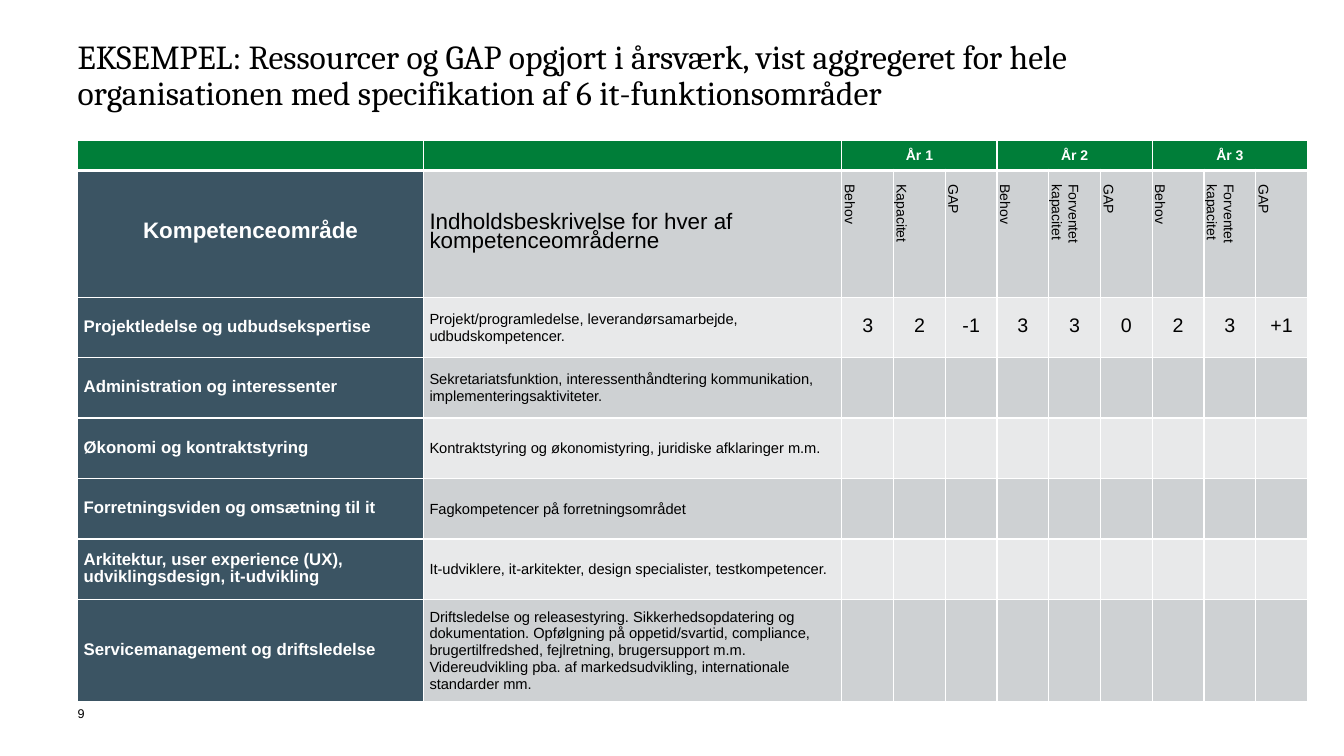
from lxml.etree import SubElement
from pptx import Presentation
from pptx.dml.color import RGBColor
from pptx.enum.text import MSO_ANCHOR, PP_ALIGN
from pptx.oxml.ns import qn
from pptx.util import Inches, Pt

COLORS = {
    "text": "000000", "white": "FFFFFF", "green": "007E39",
    "slate": "3B5463", "dark": "CED1D3", "light": "E8E9EA",
}
LEFT = 0.77
TABLE_WIDTH = 12.2
TEXT_COLS = [3.43, 4.15]
YEARS = ["År 1", "År 2", "År 3"]
MEASURES = ["Behov", "Kapacitet", "GAP"] + ["Behov", "Forventet kapacitet", "GAP"] * 2
ROW_HEIGHTS = [0.23, 0.9] + [0.6] * 5 + [1.01]
AREAS = [
    ("Projektledelse og udbudsekspertise",
     "Projekt/programledelse, leverandørsamarbejde, udbudskompetencer.",
     ["3", "2", "-1", "3", "3", "0", "2", "3", "+1"]),
    ("Administration og interessenter",
     "Sekretariatsfunktion, interessenthåndtering kommunikation, "
     "implementeringsaktiviteter.", []),
    ("Økonomi og kontraktstyring",
     "Kontraktstyring og økonomistyring, juridiske afklaringer m.m.", []),
    ("Forretningsviden og omsætning til it",
     "Fagkompetencer på forretningsområdet", []),
    ("Arkitektur, user experience (UX), udviklingsdesign, it-udvikling",
     "It-udviklere, it-arkitekter, design specialister, testkompetencer.", []),
    ("Servicemanagement og driftsledelse",
     "Driftsledelse og releasestyring. Sikkerhedsopdatering og dokumentation. "
     "Opfølgning på oppetid/svartid, compliance, brugertilfredshed, fejlretning, "
     "brugersupport m.m. Videreudvikling pba. af markedsudvikling, internationale "
     "standarder mm.", []),
]


class SlideBuilder:
    def __init__(self, slide):
        self.s = slide

    def run(self, p, text, size, color="text", font="Arial", bold=False):
        r = p.add_run()
        r.text = text
        r.font.size, r.font.name, r.font.bold = Pt(size), font, bold
        r.font.color.rgb = RGBColor.from_string(COLORS[color])

    def text(self, x, y, w, h, text, size, font="Arial", spacing=1.0):
        tf = self.s.shapes.add_textbox(Inches(x), Inches(y), Inches(w), Inches(h)).text_frame
        tf.word_wrap = True
        tf.margin_left = tf.margin_right = tf.margin_top = tf.margin_bottom = 0
        p = tf.paragraphs[0]
        p.line_spacing = spacing
        self.run(p, text, size, font=font)

    def table(self, x, y, widths, heights):
        frame = self.s.shapes.add_table(
            len(heights), len(widths), Inches(x), Inches(y),
            Inches(sum(widths)), Inches(sum(heights)))
        table = frame.table
        table.first_row = table.horz_banding = False
        for col, width in zip(table.columns, widths):
            col.width = Inches(width)
        for row, height in zip(table.rows, heights):
            row.height = Inches(height)
        return table

    def borders(self, cell, top=1, bottom=1):
        tcPr = cell._tc.get_or_add_tcPr()
        for side, width in (("L", 1), ("R", 1), ("T", top), ("B", bottom)):
            ln = SubElement(tcPr, qn(f"a:ln{side}"), w=str(Pt(width)))
            fill = SubElement(ln, qn("a:solidFill"))
            SubElement(fill, qn("a:srgbClr"), val=COLORS["white"])

    def cell(self, cell, fill, text="", size=10, color="text", bold=False,
             align=PP_ALIGN.LEFT, spacing=12, vertical=False,
             anchor=MSO_ANCHOR.MIDDLE, top=1, bottom=1):
        self.borders(cell, top, bottom)
        cell.fill.solid()
        cell.fill.fore_color.rgb = RGBColor.from_string(COLORS[fill])
        cell.margin_left = cell.margin_right = Inches(0.06)
        cell.margin_top = cell.margin_bottom = 0
        cell.vertical_anchor = anchor
        p = cell.text_frame.paragraphs[0]
        p.alignment, p.line_spacing = align, Pt(spacing)
        if vertical:
            cell._tc.get_or_add_tcPr().set("vert", "vert")
            p._p.get_or_add_pPr().set("marL", str(Inches(0.08)))
        if text:
            self.run(p, text, size, color, bold=bold)


def main():
    prs = Presentation()
    prs.slide_width, prs.slide_height = Inches(13.33), Inches(7.5)
    s = SlideBuilder(prs.slides.add_slide(prs.slide_layouts[6]))

    # Page number and title
    s.text(LEFT, 7, 0.31, 0.3, "9", 9)
    s.text(LEFT, 0.4, 11.8, 1.02,
           "EKSEMPEL: Ressourcer og GAP opgjort i årsværk, vist aggregeret for hele "
           "organisationen med specifikation af 6 it-funktionsområder",
           24, font="Cambria", spacing=0.9)

    # Table grid
    count = len(MEASURES)
    measure_width = (TABLE_WIDTH - sum(TEXT_COLS)) / count
    table = s.table(LEFT, 1.39, TEXT_COLS + [measure_width] * count, ROW_HEIGHTS)

    # Year row
    years = {2 + 3 * i: year for i, year in enumerate(YEARS)}
    for col in range(2 + count):
        s.cell(table.cell(0, col), "green", years.get(col, ""), 10, "white", True,
               PP_ALIGN.CENTER, bottom=3)
    for col in years:
        table.cell(0, col).merge(table.cell(0, col + 2))

    # Column headings
    s.cell(table.cell(1, 0), "slate", "Kompetenceområde", 16, "white", True,
           PP_ALIGN.CENTER, 14, top=3)
    s.cell(table.cell(1, 1), "dark", "Indholdsbeskrivelse for hver af kompetenceområderne",
           16, spacing=14, top=3)
    for i, measure in enumerate(MEASURES):
        anchor = MSO_ANCHOR.TOP if i == count - 1 else MSO_ANCHOR.MIDDLE
        s.cell(table.cell(1, 2 + i), "dark", measure, vertical=True, anchor=anchor, top=3)

    # Competence areas
    for row, (area, description, values) in enumerate(AREAS, 2):
        band = "dark" if row % 2 else "light"
        s.cell(table.cell(row, 0), "slate", area, 12, "white", True)
        s.cell(table.cell(row, 1), band, description, 10.5)
        for i, value in enumerate(values or [""] * count):
            s.cell(table.cell(row, 2 + i), band, value, 14,
                   align=PP_ALIGN.CENTER, spacing=14)

    prs.save("out.pptx")


if __name__ == "__main__":
    main()
